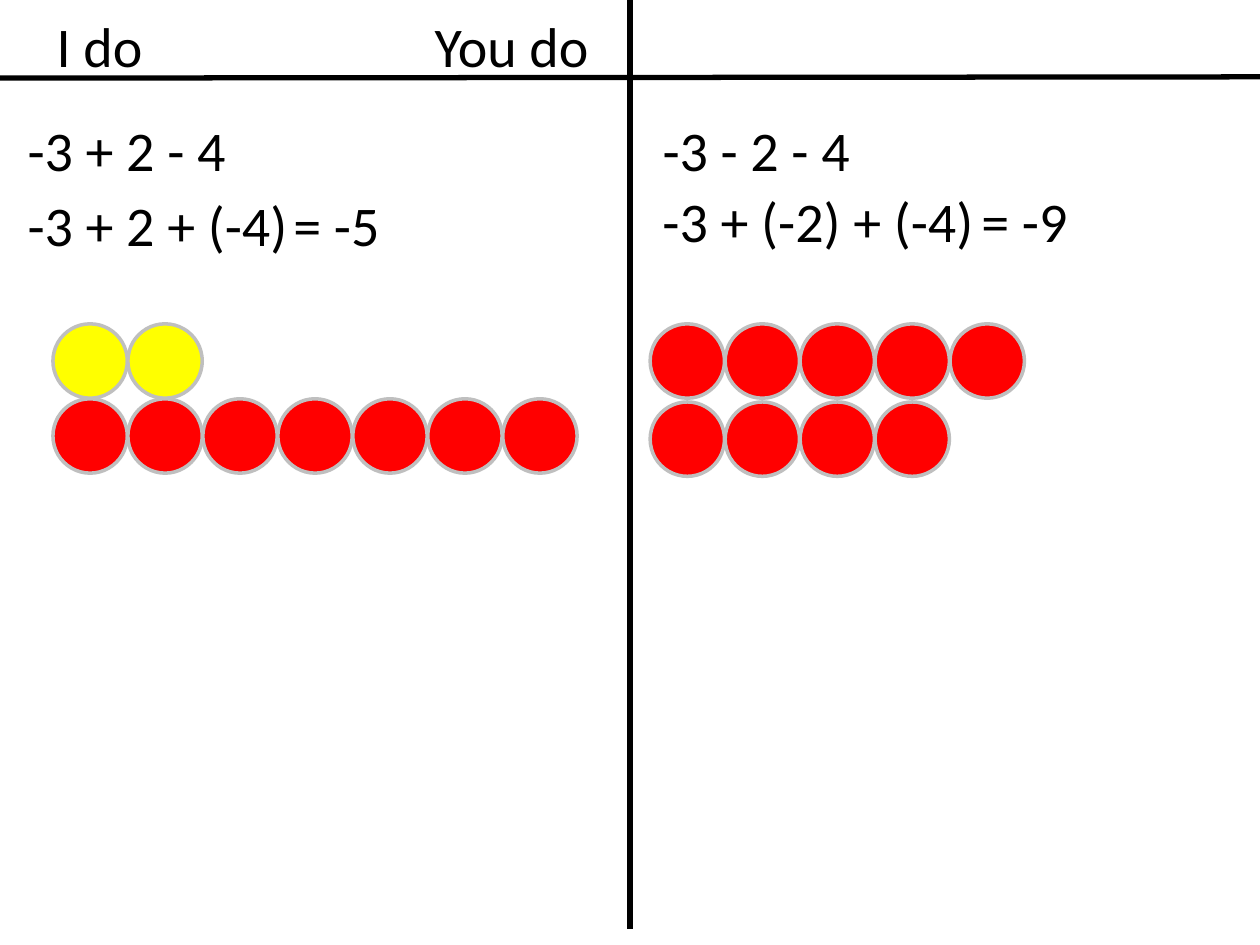
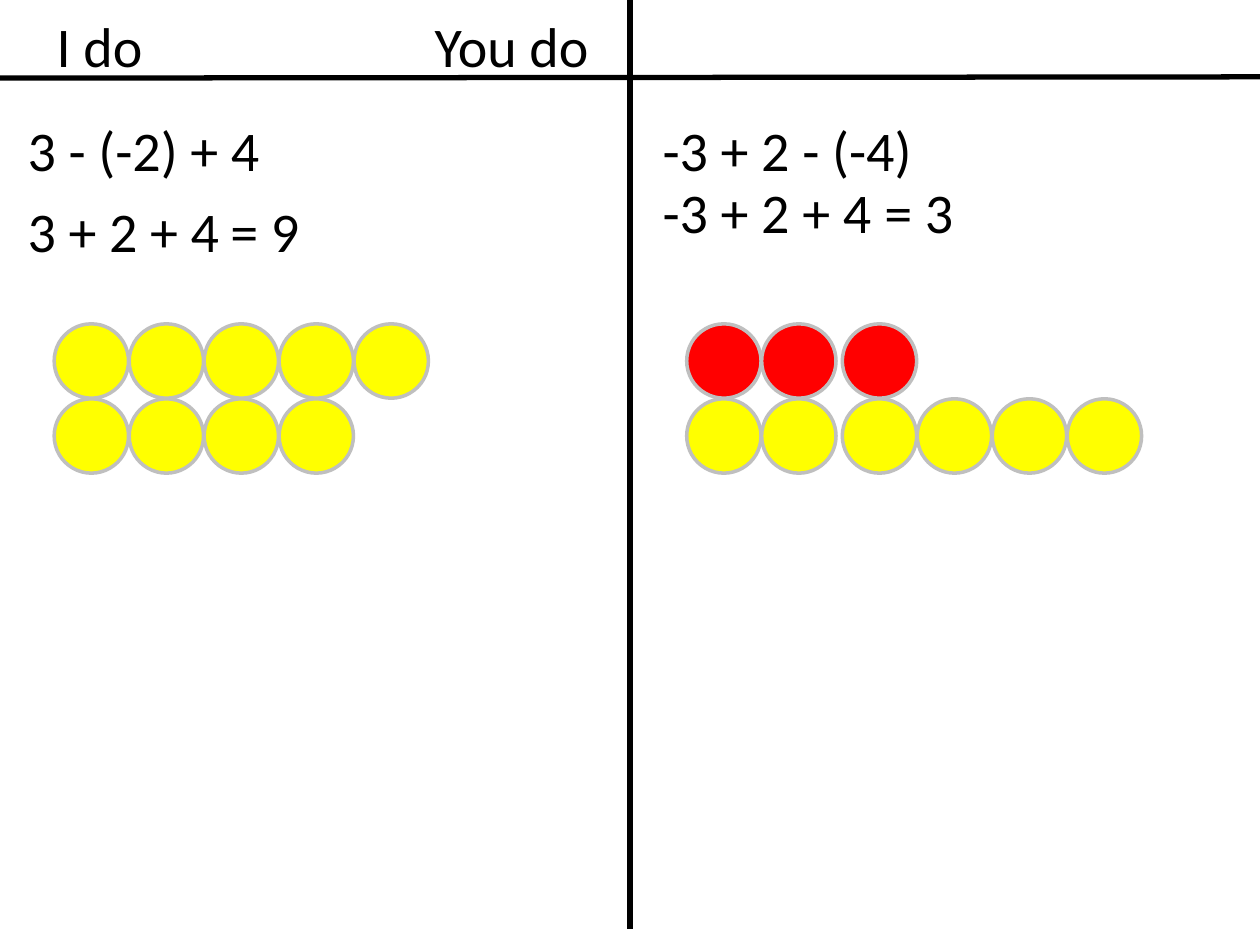
from dataclasses import dataclass

from lxml import etree
from pptx import Presentation
from pptx.dml.color import RGBColor
from pptx.enum.shapes import MSO_CONNECTOR, MSO_SHAPE
from pptx.enum.text import MSO_ANCHOR, MSO_AUTO_SIZE, PP_ALIGN
from pptx.oxml.ns import qn
from pptx.util import Inches, Pt

STRAIGHT = MSO_CONNECTOR.STRAIGHT
OVAL = MSO_SHAPE.OVAL
TOP = MSO_ANCHOR.TOP
GROW = MSO_AUTO_SIZE.SHAPE_TO_FIT_TEXT
LEFT = PP_ALIGN.LEFT

BLACK = RGBColor(0x00, 0x00, 0x00)
GREY = RGBColor(0xBF, 0xBF, 0xBF)
RED = RGBColor(0xFF, 0x00, 0x00)
YELLOW = RGBColor(0xFF, 0xFF, 0x00)

SLIDE_W, SLIDE_H = Inches(10), Inches(7.5)
COLS, ROWS = 100, 75
TITLE_ONLY = 5
HEADING = "I do" + "\t" * 5 + "You do"
FONT = {"name": "Calibri", "size": Pt(32)}
FRAME = {"word_wrap": True, "auto_size": GROW, "vertical_anchor": TOP}
TEXT_ROWS = 6.4
COUNTER, PITCH = 5.9, 5.95
FIRST_ROW = 25.7


@dataclass
class Panel:
    """One half of a slide: an expression, its rewriting and counters."""
    left: float
    indent: float
    question: str
    working: str
    answer: str
    working_top: float
    answer_left: float
    counter_left: float
    counters: tuple
    working_width: float = 22.8
    row_pitch: float = 5.95
    split: float = 0


SLIDES = [
    (Panel(0, 1.2, "-3 + 2 - 4", "-3 + 2 + (-4)", "= -5", 14.6, 22.3, 4.2,
           ((YELLOW, 2), (RED, 7))),
     Panel(50, 1.6, "-3 - 2 - 4", "-3 + (-2) + (-4)", "= -9", 14.3, 26.9, 1.6,
           ((RED, 5), (RED, 4)), working_width=30.7, row_pitch=6.2)),
    (Panel(0, 1.2, "3 - (-2) + 4", "3 + 2 + 4", "= 9", 15.1, 17.3, 4.3,
           ((YELLOW, 5), (YELLOW, 4))),
     Panel(50, 1.6, "-3 + 2 - (-4)", "-3 + 2 + 4", "= 3", 13.6, 19.2, 4.5,
           ((RED, 3), (YELLOW, 6)), split=0.45)),
]


def grid(x, y, *size):
    """Turn columns and rows of the slide grid into lengths."""
    units = (SLIDE_W / COLS, SLIDE_H / ROWS)
    return [round(v * units[i % 2]) for i, v in enumerate((x, y, *size))]


def apply(target, values):
    """Set every attribute named in the dict."""
    for name, value in values.items():
        setattr(target, name, value)


def write(sp, text):
    """Put one left-aligned line of text in a shape."""
    tf = sp.text_frame
    apply(tf, FRAME)
    p = tf.paragraphs[0]
    p.alignment = LEFT
    r = p.add_run()
    r.text = text
    apply(r.font, FONT)
    r.font.color.rgb = BLACK


def add_text(s, text, *box):
    """Add a text box on the grid."""
    write(s.shapes.add_textbox(*grid(*box)), text)


def add_rule(s, start, end):
    """Add a thick black line between two grid points."""
    line = s.shapes.add_connector(STRAIGHT, *grid(*start), *grid(*end))
    line.line.color.rgb = BLACK
    line.line.width = Pt(3)
    etree.SubElement(line._element.spPr, qn("a:effectLst"))


def add_frame(s):
    """Add the heading and the lines that divide the slide."""
    left, top, width, height = grid(3.5, 0.4, 77.2, TEXT_ROWS)
    title = s.shapes.title
    apply(title, {"left": left, "top": top, "width": width, "height": height})
    write(title, HEADING)
    add_rule(s, (50, 0), (50, 73.7))
    add_rule(s, (100, 6.1), (0, 6.2))


def add_counters(s, panel):
    """Add each row of touching counters as a group."""
    for row, (colour, count) in enumerate(panel.counters):
        group = s.shapes.add_group_shape()
        y = FIRST_ROW + row * panel.row_pitch
        for i in range(count):
            x = panel.left + panel.counter_left + i * PITCH
            x += panel.split if i > 1 else 0
            sp = group.shapes.add_shape(OVAL, *grid(x, y, COUNTER, COUNTER))
            sp.shadow.inherit = False
            sp.fill.solid()
            sp.fill.fore_color.rgb = colour
            sp.line.color.rgb = GREY
            sp.line.width = Pt(2)


def add_panel(s, panel):
    """Add the expressions and counters of one half."""
    x = panel.left + panel.indent
    y = panel.working_top
    add_text(s, panel.question, x, 8.7, 22.8, TEXT_ROWS)
    add_text(s, panel.working, x, y, panel.working_width, TEXT_ROWS)
    add_text(s, panel.answer, panel.left + panel.answer_left, y, 22.8, TEXT_ROWS)
    add_counters(s, panel)


def main():
    """Build both slides and save them."""
    prs = Presentation()
    prs.slide_width, prs.slide_height = SLIDE_W, SLIDE_H
    for panels in SLIDES:
        s = prs.slides.add_slide(prs.slide_layouts[TITLE_ONLY])
        add_frame(s)
        for panel in panels:
            add_panel(s, panel)
    prs.save("out.pptx")


if __name__ == "__main__":
    main()
